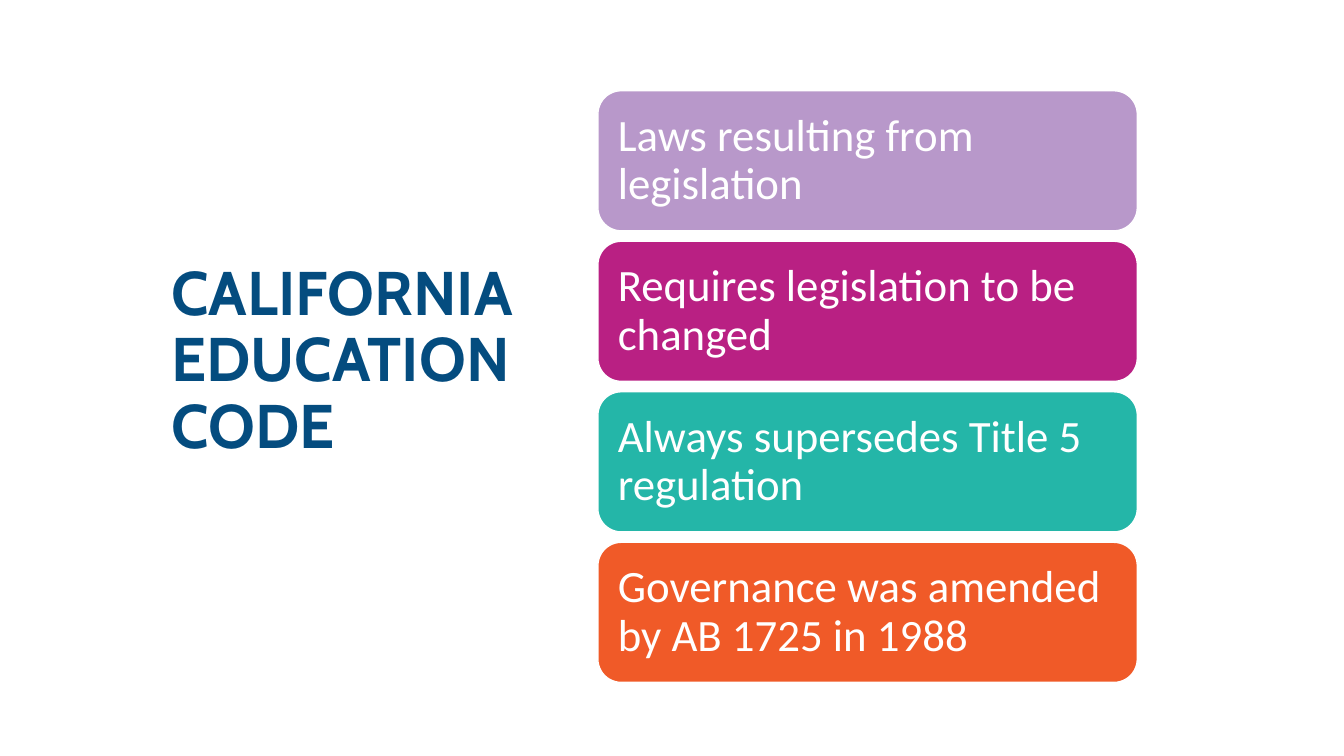
"""Build the California Education Code slide."""
from collections import namedtuple

from pptx import Presentation
from pptx import util as u
from pptx.dml.color import RGBColor
from pptx.enum import shapes, text

PX = u.Inches(1) // 100
Box = namedtuple("Box", "left top width height")

WHITE = RGBColor(0xFF, 0xFF, 0xFF)
NAVY = RGBColor(0x04, 0x4C, 0x7F)
LILAC = RGBColor(0xB8, 0x98, 0xCA)
MAGENTA = RGBColor(0xB9, 0x20, 0x83)
TEAL = RGBColor(0x24, 0xB6, 0xA8)
ORANGE = RGBColor(0xF0, 0x5A, 0x28)

FACTS = [
    ("Laws resulting from legislation", LILAC),
    ("Requires legislation to be changed", MAGENTA),
    ("Always supersedes Title 5 regulation", TEAL),
    ("Governance was amended by AB 1725 in 1988", ORANGE),
]
CARD_HEIGHT = 139
CARD_INSET = 13


def write(frame, words, font_name, size, color, bold=False):
    """Fill a frame with one left-aligned, vertically centred paragraph."""
    frame.word_wrap = True
    frame.auto_size = text.MSO_AUTO_SIZE.NONE
    frame.vertical_anchor = text.MSO_ANCHOR.MIDDLE
    frame.text = words
    para = frame.paragraphs[0]
    para.alignment = text.PP_ALIGN.LEFT
    para.line_spacing = 0.9
    para.font.name = font_name
    para.font.size = u.Pt(size)
    para.font.bold = bold
    para.font.color.rgb = color


def add_title(page, box):
    """Place the slide title in its placeholder."""
    title = page.shapes.title
    title.left, title.top, title.width, title.height = (
        length * PX for length in box)
    title.text_frame.margin_right = 0
    write(title.text_frame, "CALIFORNIA EDUCATION CODE", "Cabin", 44, NAVY, True)


def add_card(page, box, words, color):
    """Draw one rounded card with its statement."""
    card = page.shapes.add_shape(
        shapes.MSO_SHAPE.ROUNDED_RECTANGLE,
        *(round(length * PX) for length in box))
    card.shadow.inherit = False
    card.fill.solid()
    card.fill.fore_color.rgb = color
    card.line.color.rgb = WHITE
    card.line.width = u.Pt(1)
    frame = card.text_frame
    frame.margin_left = frame.margin_right = CARD_INSET * PX
    frame.margin_top = frame.margin_bottom = CARD_INSET * PX
    write(frame, words, "Calibri", 32, WHITE)


def add_cards(page, box):
    """Stack the fact cards evenly over the height of the box."""
    pitch = (box.height - CARD_HEIGHT) / (len(FACTS) - 1)
    for index, (words, color) in enumerate(FACTS):
        card_box = box._replace(top=box.top + index * pitch, height=CARD_HEIGHT)
        add_card(page, card_box, words, color)


def main():
    """Create the deck and save it."""
    deck = Presentation()
    deck.slide_width, deck.slide_height = 1333 * PX, 750 * PX
    page = deck.slides.add_slide(deck.slide_layouts.get_by_name("Title Only"))
    add_title(page, Box(160, 227, 359, 264))
    add_cards(page, Box(593, 90, 535, 587))
    deck.save("out.pptx")


if __name__ == "__main__":
    main()
